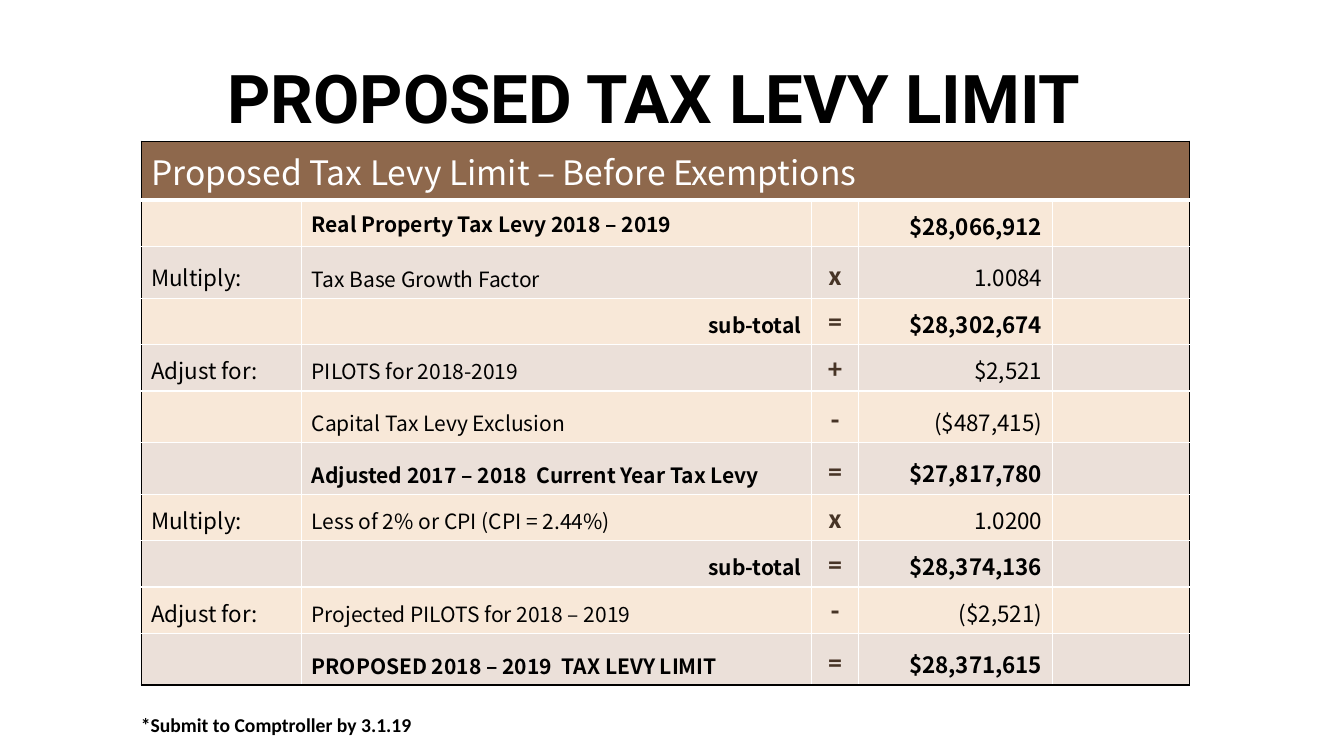
import pptx
import pptx.dml.color
import pptx.enum.text
import pptx.oxml
import pptx.oxml.ns
import pptx.util

Cm = pptx.util.Cm
ALIGN = pptx.enum.text.PP_ALIGN
ANCHOR = pptx.enum.text.MSO_ANCHOR

BODY_FONT = "Noto Sans CJK KR"
BLACK, WHITE = "000000", "FFFFFF"
HEADING_FILL, BAND_FILLS = "8E684C", ("F8E8D8", "EBE0D9")
OPERATOR_COLOUR = "473426"
HEADING = "Proposed Tax Levy Limit – Before Exemptions"
COLUMN_WIDTHS = (4.04, 12.85, 1.19, 4.88, 3.45)
HEADING_HEIGHT, SHORT_ROW, TALL_ROW = 1.47, 1.17, 1.3
TALL_ROWS = (2, 5, 6, 10)
LEVY_STEPS = (
    ("", "Real Property Tax Levy 2018 – 2019", "", "$28,066,912", True),
    ("Multiply:", "Tax Base Growth Factor", "x", "1.0084", False),
    ("", "sub-total", "=", "$28,302,674", True),
    ("Adjust for:", "PILOTS for 2018-2019", "+", "$2,521", False),
    ("", "Capital Tax Levy Exclusion", "-", "($487,415)", False),
    ("", "Adjusted 2017 – 2018  Current Year Tax Levy", "=", "$27,817,780", True),
    ("Multiply:", "Less of 2% or CPI (CPI = 2.44%)", "x", "1.0200", False),
    ("", "sub-total", "=", "$28,374,136", True),
    ("Adjust for:", "Projected PILOTS for 2018 – 2019", "-", "($2,521)", False),
    ("", "PROPOSED 2018 – 2019  TAX LEVY LIMIT", "=", "$28,371,615", True),
)


def colour(hex_text):
    """Turn a hex string into a colour."""
    return pptx.dml.color.RGBColor.from_string(hex_text)


def write_text(frame, text, size, font, ink=BLACK, bold=False, align=ALIGN.LEFT):
    """Write one formatted paragraph into a text frame."""
    para = frame.paragraphs[0]
    para.text = text
    para.alignment = align
    for style in (para.font, *(span.font for span in para.runs)):
        style.size = pptx.util.Pt(size)
        style.name = font
        style.bold = bold
        style.color.rgb = colour(ink)


def add_label(page, box, text, size, font, align=ALIGN.LEFT):
    """Place a bold line of text in a box given in centimetres."""
    frame = page.shapes.add_textbox(*map(Cm, box)).text_frame
    frame.word_wrap = True
    write_text(frame, text, size, font, bold=True, align=align)


def style_cell(cell, fill, edges):
    """Give a cell its four borders and its fill."""
    properties = cell._tc.get_or_add_tcPr()
    for side in ("L", "R", "T", "B"):
        ink, width = edges.get(side, (WHITE, 1))
        properties.append(pptx.oxml.parse_xml(
            f'<a:ln{side} {pptx.oxml.ns.nsdecls("a")} w="{pptx.util.Pt(width)}">'
            f'<a:solidFill><a:srgbClr val="{ink}"/></a:solidFill></a:ln{side}>'))
    cell.fill.solid()
    cell.fill.fore_color.rgb = colour(fill)
    cell.vertical_anchor = ANCHOR.BOTTOM


def write_step(cells, step):
    """Write one calculation step into the cells of a row."""
    action, item, operator, amount, bold = step
    item_align = ALIGN.RIGHT if item == "sub-total" else ALIGN.LEFT
    write_text(cells[0].text_frame, action, 16, BODY_FONT)
    write_text(cells[1].text_frame, item, 15, BODY_FONT, bold=bold, align=item_align)
    write_text(cells[2].text_frame, operator, 20, "Calibri", OPERATOR_COLOUR, True, ALIGN.CENTER)
    write_text(cells[3].text_frame, amount, 16, BODY_FONT, bold=bold, align=ALIGN.RIGHT)
    write_text(cells[4].text_frame, "", 16, BODY_FONT)


def add_levy_table(page, box):
    """Build the levy calculation table in a box given in centimetres."""
    last_row, last_column = len(LEVY_STEPS), len(COLUMN_WIDTHS) - 1
    table = page.shapes.add_table(last_row + 1, last_column + 1, *map(Cm, box)).table
    table.first_row = table.horz_banding = False
    for column, width in zip(table.columns, COLUMN_WIDTHS):
        column.width = Cm(width)
    for index, row in enumerate(table.rows):
        row.height = Cm(TALL_ROW if index in TALL_ROWS else SHORT_ROW)
        fill = BAND_FILLS[(index - 1) % 2] if index else HEADING_FILL
        for position, cell in enumerate(row.cells):
            edges = {} if index else {"T": (BLACK, 1), "B": (WHITE, 3)}
            if position == 0:
                edges["L"] = (BLACK, 1)
            if position == last_column or index == 0:
                edges["R"] = (BLACK, 1)
            if index == last_row:
                edges["B"] = (BLACK, 1)
            style_cell(cell, fill, edges)
        if index:
            write_step(list(row.cells), LEVY_STEPS[index - 1])
    table.rows[0].height = Cm(HEADING_HEIGHT)
    table.cell(0, 0).merge(table.cell(0, last_column))
    write_text(table.cell(0, 0).text_frame, HEADING, 24, BODY_FONT, WHITE)
    table.cell(1, 1).vertical_anchor = ANCHOR.MIDDLE


def main():
    """Build and save the deck."""
    deck = pptx.Presentation()
    deck.slide_width, deck.slide_height = Cm(33.87), Cm(19.05)
    page = deck.slides.add_slide(deck.slide_layouts[6])
    add_levy_table(page, (3.56, 3.56, 26.41, 13.69))
    add_label(page, (4.27, 1.3, 24.43, 2.31), "PROPOSED TAX LEVY LIMIT", 48, "Roboto", ALIGN.CENTER)
    add_label(page, (3.3, 17.83, 8.28, 0.86), "*Submit to Comptroller by 3.1.19", 14, "Calibri")
    deck.save("out.pptx")


if __name__ == "__main__":
    main()
